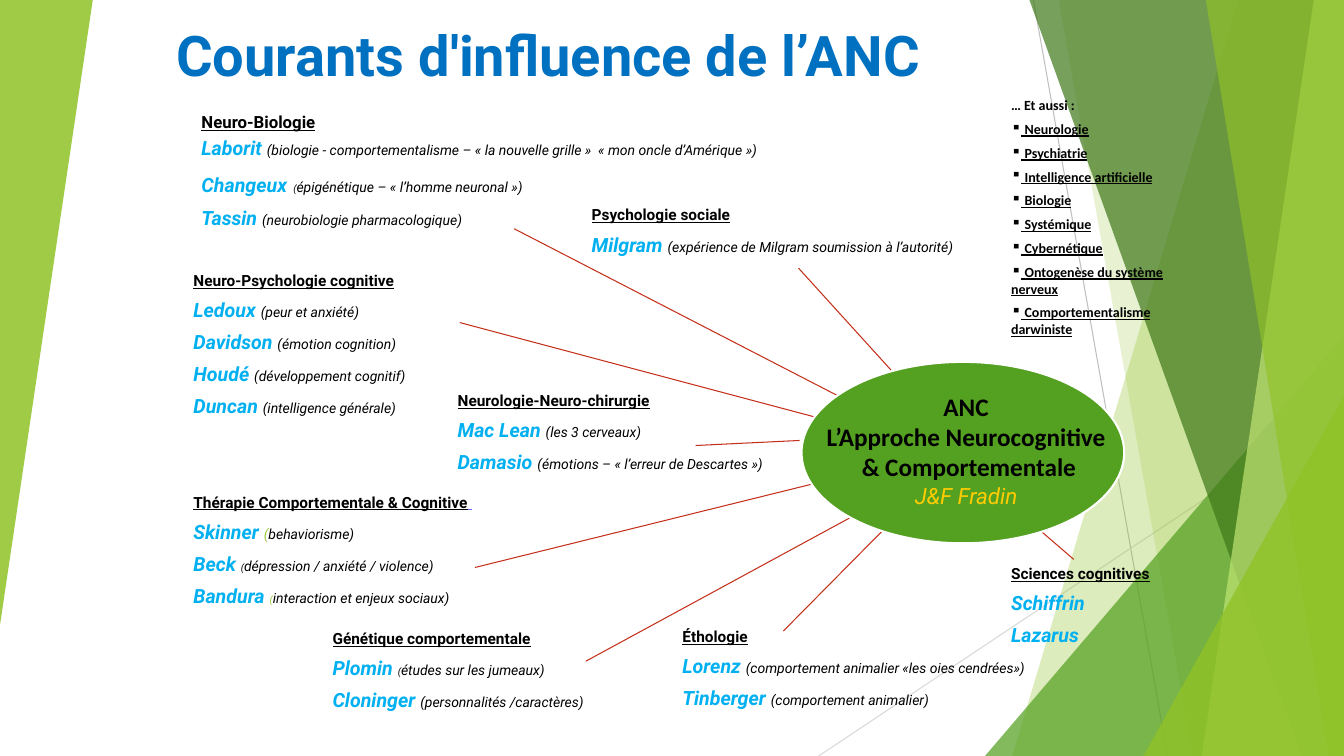
from lxml import etree
from pptx import Presentation
from pptx.dml.color import RGBColor
from pptx.enum.shapes import MSO_CONNECTOR, MSO_SHAPE
from pptx.enum.text import PP_ALIGN
from pptx.oxml.ns import qn
from pptx.util import Inches, Pt

STRAIGHT = MSO_CONNECTOR.STRAIGHT
TRIANGLE, OVAL = MSO_SHAPE.RIGHT_TRIANGLE, MSO_SHAPE.OVAL
TRIANGLE = MSO_SHAPE.ISOSCELES_TRIANGLE
CENTER = PP_ALIGN.CENTER

BLACK = RGBColor(0x00, 0x00, 0x00)
WHITE = RGBColor(0xFF, 0xFF, 0xFF)
TITLE_BLUE = RGBColor(0x00, 0x70, 0xC0)
NAME_BLUE = RGBColor(0x00, 0xB0, 0xF0)
VIOLET = RGBColor(0x66, 0x66, 0xFF)
GOLD = RGBColor(0xFF, 0xCC, 0x00)
RED = RGBColor(0xC4, 0x2F, 0x1A)
GREEN = RGBColor(0x54, 0xA0, 0x21)
LIME = RGBColor(0x90, 0xC2, 0x26)
PALE_LIME = RGBColor(0xC0, 0xE4, 0x74)
DARK_GREEN = RGBColor(0x3F, 0x78, 0x19)
BRACKET_GREEN = RGBColor(0x99, 0xCA, 0x3C)
GREY = RGBColor(0xBF, 0xBF, 0xBF)
LIGHT_GREY = RGBColor(0xD9, 0xD9, 0xD9)

# Text formats
TITLE = dict(name="Roboto", size=Pt(40), bold=True, color=TITLE_BLUE)
HEADING = dict(name="Roboto", size=Pt(11), bold=True, underline=True, color=BLACK)
BIG_HEADING = {**HEADING, "size": Pt(12)}
HEADING_END = {**HEADING, "color": VIOLET}
NAME = dict(name="Roboto", size=Pt(14), bold=True, italic=True, color=NAME_BLUE)
DETAIL = dict(name="Roboto", size=Pt(10), italic=True, color=BLACK)
WIDE_GAP = {**DETAIL, "size": Pt(18)}
SMALL = {**DETAIL, "size": Pt(7)}
GREEN_BRACKET = {**DETAIL, "color": BRACKET_GREEN}
SMALL_GREEN = {**SMALL, "color": BRACKET_GREEN}
ALSO = dict(name="Calibri", size=Pt(10), bold=True, color=BLACK)
ALSO_ITEM = {**ALSO, "underline": True}
CORE = dict(name="Calibri", size=Pt(18), bold=True, color=BLACK)
AUTHORS = dict(name="Roboto", size=Pt(16), italic=True, color=GOLD)

# Background bands: top left, bottom right, bottom left x; colour; opacity
BANDS = [
    (12.28, 13.33, 10.04, LIME, 30),
    (10.5, 13.33, 11.83, LIME, 20),
    (10.21, 13.33, 12.91, DARK_GREEN, 70),
    (13.03, 13.33, 11.92, PALE_LIME, 70),
    (11.96, 13.33, 13.18, LIME, 65),
]

RAYS = [
    (7.92, 2.66, 9.48, 4.38), (5.1, 2.27, 9.48, 4.53),
    (7.77, 6.26, 9.48, 4.53), (5.81, 6.56, 9.4, 4.61),
    (4.71, 5.63, 9.48, 4.45), (6.9, 4.42, 7.93, 4.37),
    (4.56, 3.2, 9.56, 4.53), (10.65, 5.55, 9.56, 4.61),
]

# Each school: place, heading spans, then one list of spans per person
SCHOOLS = [
    ((1.9, 1.06, 7.06, 1.46), [("Neuro-Biologie", BIG_HEADING)], [
        [("Laborit ", NAME), ("(biologie - comportementalisme – « la nouvelle grille »  "
                              "« mon oncle d’Amérique »)", DETAIL)],
        [("Changeux", NAME), (" ", WIDE_GAP), ("(", SMALL),
         ("épigénétique – « l’homme neuronal »)", DETAIL)],
        [("Tassin ", NAME), ("(neurobiologie pharmacologique)", DETAIL)]]),
    ((1.82, 2.64, 3.86, 1.73), [("Neuro-Psychologie cognitive", HEADING)], [
        [("Ledoux ", NAME), ("(peur et anxiété)", DETAIL)],
        [("Davidson ", NAME), ("(émotion cognition)", DETAIL)],
        [("Houdé ", NAME), ("(développement cognitif)", DETAIL)],
        [("Duncan ", NAME), ("(intelligence générale)", DETAIL)]]),
    ((5.77, 1.99, 4.57, 0.61), [("Psychologie sociale", HEADING)], [
        [("Milgram ", NAME), ("(expérience de Milgram soumission à l’autorité)", DETAIL)]]),
    ((4.44, 3.83, 5.12, 0.96), [("Neurologie-Neuro-chirurgie", HEADING)], [
        [("Mac Lean ", NAME), ("(les 3 cerveaux)", DETAIL)],
        [("Damasio ", NAME), ("(émotions – « l’erreur de Descartes »)", DETAIL)]]),
    ((6.67, 6.17, 4.17, 0.93), [("Éthologie", HEADING)], [
        [("Lorenz ", NAME), ("(comportement animalier «les oies cendrées»)", DETAIL)],
        [("Tinberger ", NAME), ("(comportement animalier)", DETAIL)]]),
    ((3.2, 6.19, 3.47, 1.09), [("Génétique comportementale", HEADING)], [
        [("Plomin ", NAME), ("(", SMALL), ("études sur les jumeaux)", DETAIL)],
        [("Cloninger ", NAME), ("(personnalités /caractères)", DETAIL)]]),
    ((1.82, 4.84, 4.8, 1.41),
     [("Thérapie Comportementale & Cognitive", HEADING), (" ", HEADING_END)], [
        [("Skinner ", NAME), ("(", GREEN_BRACKET), ("behaviorisme)", DETAIL)],
        [("Beck ", NAME), ("(", SMALL), ("dépression / anxiété / violence)", DETAIL)],
        [("Bandura ", NAME), ("(", SMALL_GREEN), ("interaction et enjeux sociaux)", DETAIL)]]),
    ((9.93, 5.55, 1.74, 0.93), [("Sciences cognitives", HEADING)], [
        [("Schiffrin", NAME)], [("Lazarus", NAME)]]),
]

ALSO_FIELDS = [
    "Neurologie", "Psychiatrie", "Intelligence artificielle", "Biologie", "Systémique",
    "Cybernétique", "Ontogenèse du système nerveux", "Comportementalisme darwiniste",
]


def add_line(page, ends, color):
    line = page.shapes.add_connector(STRAIGHT, *map(Inches, ends))
    line.line.color.rgb = color
    line.line.width = Pt(0.75)
    etree.SubElement(line._element.spPr, qn("a:effectLst"))


def paint(shape, color, opacity=100):
    shape.shadow.inherit = False
    shape.fill.solid()
    shape.fill.fore_color.rgb = color
    shape.line.fill.background()
    if opacity < 100:
        tint = shape._element.spPr.find(qn("a:solidFill")).find(qn("a:srgbClr"))
        etree.SubElement(tint, qn("a:alpha"), val=str(opacity * 1000))


def add_band(page, top_left, bottom_right, bottom_left, color, opacity):
    points = [(13.33, 0), (13.33, 7.5), (bottom_left, 7.5)]
    if bottom_left > top_left:
        points[2] = (bottom_left, 7.5)
    builder = page.shapes.build_freeform(Inches(top_left), 0)
    builder.add_line_segments([(Inches(x), Inches(y)) for x, y in points])
    paint(builder.convert_to_shape(), color, opacity)


def add_triangle(page, place, color, opacity, rotation=0):
    triangle = page.shapes.add_shape(TRIANGLE, *map(Inches, place))
    triangle.adjustments[0] = 1.0
    triangle.rotation = rotation
    paint(triangle, color, opacity)


def add_span(para, text, style):
    span = para.add_run()
    span.text = text
    for key, value in style.items():
        if key == "color":
            span.font.color.rgb = value
        else:
            setattr(span.font, key, value)


def add_text(page, place, lines, gaps=(), align=None, bullet=None):
    """Write one paragraph per list of spans; gaps holds the space before each later one."""
    frame = page.shapes.add_textbox(*map(Inches, place)).text_frame
    frame.word_wrap = True
    for index, spans in enumerate(lines):
        para = frame.add_paragraph() if index else frame.paragraphs[0]
        para.alignment = align
        if index and gaps:
            para.space_before = Pt(gaps[index - 1])
        if index and bullet:
            etree.SubElement(para._p.get_or_add_pPr(), qn("a:buChar"), char=bullet)
        for text, style in spans:
            add_span(para, text, style)


def add_backdrop(page):
    add_line(page, (10.25, 0, 11.58, 7.5), GREY)
    add_line(page, (13.33, 4.03, 8.12, 7.5), LIGHT_GREY)
    for band in BANDS[:2]:
        add_band(page, *band)
    add_triangle(page, (9.77, 3.33, 3.56, 4.17), GREEN, 72)
    for band in BANDS[2:]:
        add_band(page, *band)
    add_triangle(page, (11.34, 3.93, 1.99, 3.57), LIME, 80)
    add_triangle(page, (0, 0, 0.92, 6.2), LIME, 85, rotation=180)


def add_core(page):
    oval = page.shapes.add_shape(OVAL, *map(Inches, (7.95, 3.59, 3.2, 1.8)))
    paint(oval, GREEN)
    oval.line.color.rgb = WHITE
    oval.line.width = Pt(1.5)
    add_text(page, (7.6, 3.83, 4.02, 1.28), [
        [("ANC ", CORE)], [("L’Approche Neurocognitive ", CORE)],
        [("& Comportementale", CORE)], [("J&F Fradin ", AUTHORS)]], align=CENTER)


def main():
    deck = Presentation()
    deck.slide_width, deck.slide_height = Inches(13.33), Inches(7.5)
    page = deck.slides.add_slide(deck.slide_layouts[6])
    add_backdrop(page)

    # Title and side list
    add_text(page, (1.65, 0.15, 9.35, 0.77), [[("Courants d'influence de l’ANC", TITLE)]])
    also = [[("… Et aussi :", ALSO)]] + [[(" " + field, ALSO_ITEM)] for field in ALSO_FIELDS]
    add_text(page, (9.93, 0.91, 1.73, 2.6), also, [5] * len(ALSO_FIELDS), bullet="▪")

    # Schools linked to the centre
    for ends in RAYS:
        add_line(page, ends, RED)
    for place, heading, people in SCHOOLS:
        first_gap = 2.5 if heading[0][1] is BIG_HEADING else 6
        add_text(page, place, [heading] + people, [first_gap] + [6] * (len(people) - 1))
    add_core(page)
    deck.save("out.pptx")


if __name__ == "__main__":
    main()
